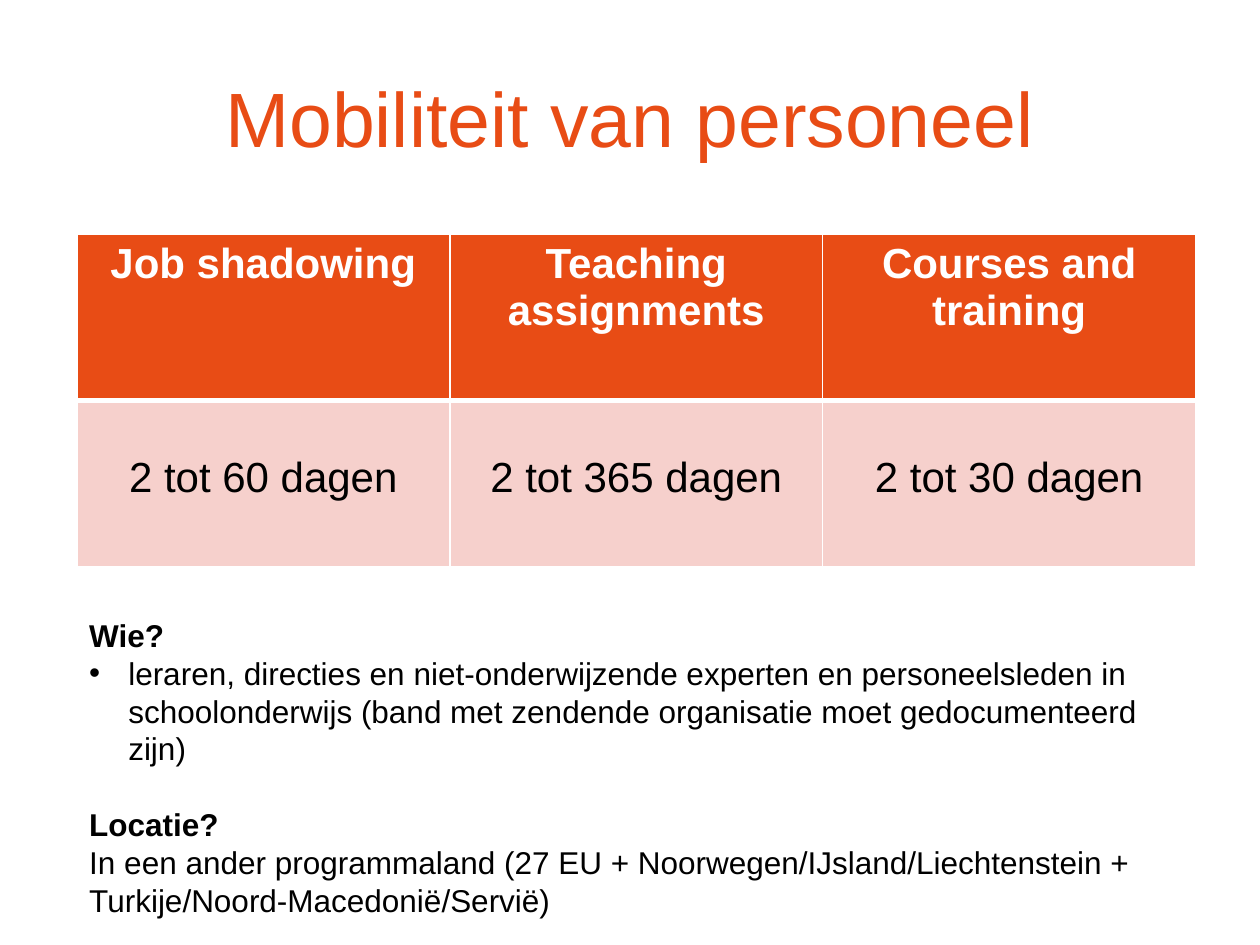
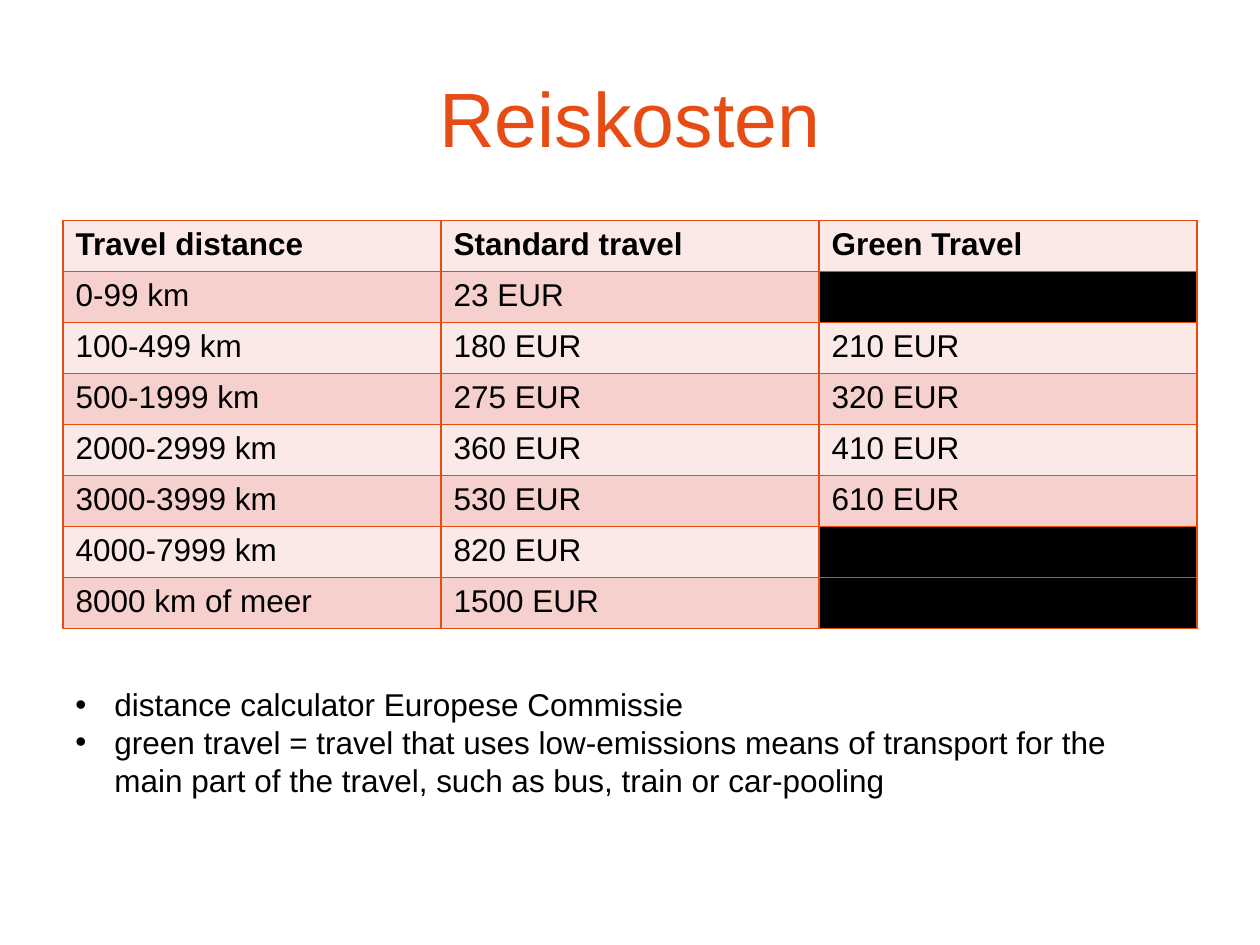
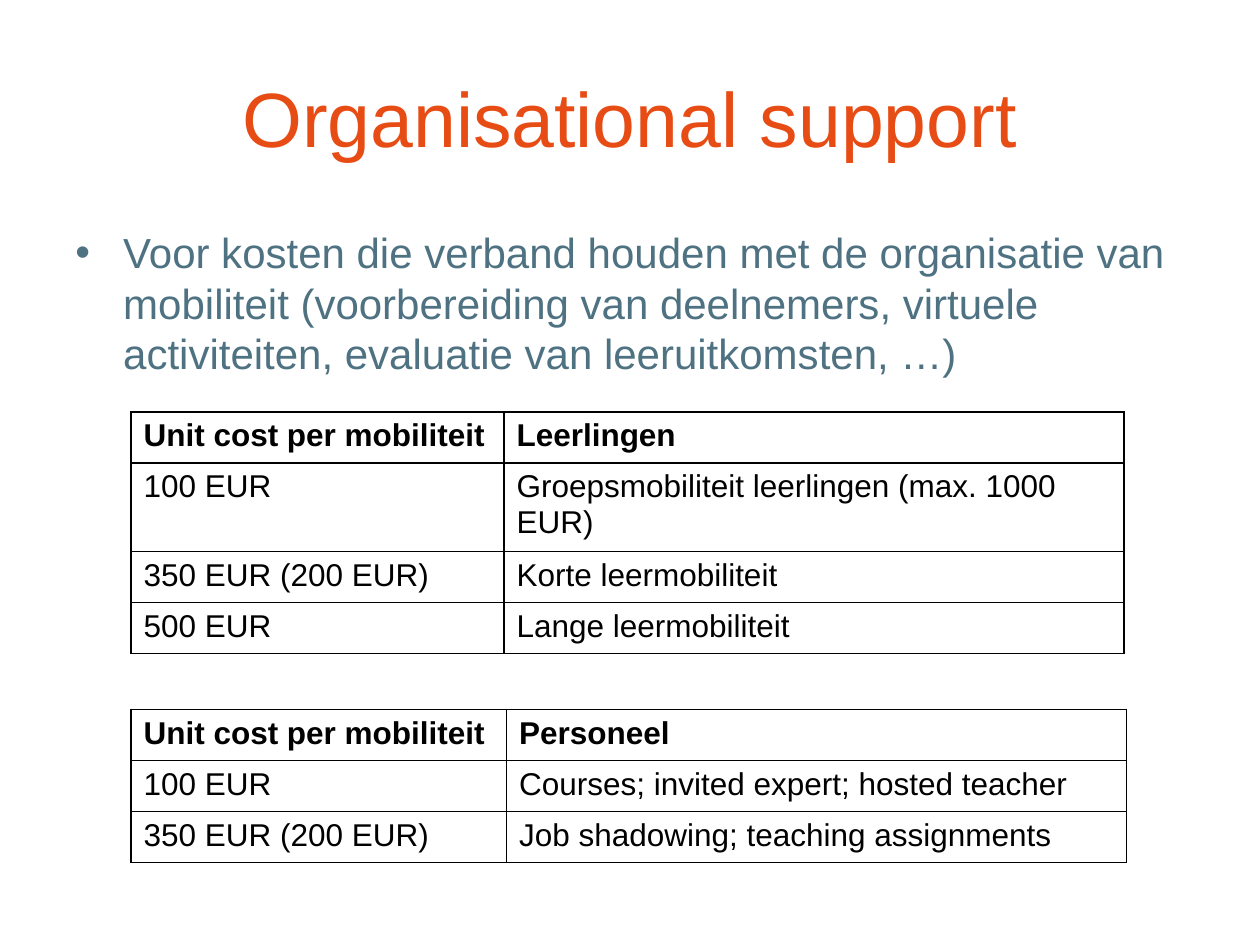
from pptx import Presentation
from pptx.dml.color import RGBColor
from pptx.enum.text import MSO_ANCHOR, PP_ALIGN
from pptx.oxml import parse_xml
from pptx.oxml.ns import nsdecls
from pptx.util import Emu, Inches, Pt

CENTER, LEFT = PP_ALIGN.CENTER, PP_ALIGN.LEFT
MIDDLE, TOP = MSO_ANCHOR.MIDDLE, MSO_ANCHOR.TOP

FONT = "Arial"
COLORS = {
    "orange": "E84C15",
    "pink": "F6D0CC",
    "pale": "FBE9E8",
    "slate": "4E7282",
    "black": "000000",
    "white": "FFFFFF",
}

# Grid of 20 columns by 15 rows; boxes are (column, row, columns, rows)
SLIDE_WIDTH, SLIDE_HEIGHT = Inches(10), Inches(7.5)
COLUMN, ROW = SLIDE_WIDTH / 20, SLIDE_HEIGHT / 15
TITLE_BOX = (1, 0.6, 18, 2.5)
LINE_ROWS = 0.81  # height of a table row with one line of text


def place(box):
    left, top, width, height = box
    return [Emu(round(length)) for length in
            (left * COLUMN, top * ROW, width * COLUMN, height * ROW)]


def write(paragraph, text, size, color="black", bold=False, align=LEFT):
    run = paragraph.add_run()
    run.text = text
    paragraph.alignment = align
    font_format = {"name": FONT, "size": Pt(size), "bold": bold}
    for attribute, value in font_format.items():
        setattr(run.font, attribute, value)
    run.font.color.rgb = RGBColor.from_string(COLORS[color])


def add_bullet(paragraph, indent):
    properties = paragraph._p.get_or_add_pPr()
    properties.set("marL", str(Inches(indent)))
    properties.set("indent", str(-Inches(indent)))
    properties.append(parse_xml(f'<a:buFont {nsdecls("a")} typeface="{FONT}"/>'))
    properties.append(parse_xml(f'<a:buChar {nsdecls("a")} char="•"/>'))


def add_text(slide, box, items, size, anchor=TOP, **style):
    """Each item is a text and its options: bold, bullet indent, space before."""
    frame = slide.shapes.add_textbox(*place(box)).text_frame
    frame.word_wrap = True
    frame.vertical_anchor = anchor
    for index, (text, options) in enumerate(items):
        paragraph = frame.add_paragraph() if index else frame.paragraphs[0]
        if "space" in options:
            paragraph.space_before = Pt(options["space"])
        if "bullet" in options:
            add_bullet(paragraph, options["bullet"])
        write(paragraph, text, size, bold=options.get("bold", False), **style)


def set_borders(cell, color, widths):
    """Draw the left, right, top and bottom border, with widths in points."""
    properties = cell._tc.get_or_add_tcPr()
    for side, width in zip("LRTB", widths):
        properties.append(parse_xml(
            f'<a:ln{side} {nsdecls("a")} w="{Pt(width)}"><a:solidFill>'
            f'<a:srgbClr val="{COLORS[color]}"/></a:solidFill></a:ln{side}>'))


def add_grid(slide, box, rows, column_shares, row_shares, style_cell):
    """Add a table; style_cell borders and fills a cell, and gives its text style."""
    left, top, width, height = place(box)
    table = slide.shapes.add_table(
        len(rows), len(column_shares), left, top, width, height).table
    table.first_row = table.horz_banding = False
    for column, share in zip(table.columns, column_shares):
        column.width = Emu(round(width * share / sum(column_shares)))
    for row, share in zip(table.rows, row_shares):
        row.height = Emu(round(height * share / sum(row_shares)))
    for row_index, texts in enumerate(rows):
        for column_index, text in enumerate(texts):
            cell = table.cell(row_index, column_index)
            fill, text_style = style_cell(cell, row_index, text)
            if fill:
                cell.fill.solid()
                cell.fill.fore_color.rgb = RGBColor.from_string(COLORS[fill])
            else:
                cell.fill.background()
            if text:
                write(cell.text_frame.paragraphs[0], text, **text_style)


# Table styles
def style_duration(cell, row_index, text):
    header = row_index == 0
    set_borders(cell, "white", (1, 1, 1, 3) if header else (1, 1, 3, 1))
    if not header:
        cell.margin_top = Inches(0.43)
    return ("orange" if header else "pink",
            {"size": 24, "color": "white" if header else "black",
             "bold": header, "align": CENTER})


def style_rate(cell, row_index, text):
    set_borders(cell, "orange", [1] * 4)
    band = "pink" if row_index % 2 else "pale"
    return band if text else "black", {"size": 18, "bold": row_index == 0}


def style_unit_cost(cell, row_index, text):
    set_borders(cell, "black", [1] * 4)
    return None, {"size": 18, "bold": row_index == 0}


# Slides
def add_titled_slide(presentation, title):
    slide = presentation.slides.add_slide(presentation.slide_layouts[6])
    add_text(slide, TITLE_BOX, [(title, {})], 44, anchor=MIDDLE,
             color="orange", align=CENTER)
    return slide


def add_staff_slide(presentation):
    slide = add_titled_slide(presentation, "Mobiliteit van personeel")
    durations = [
        ("Job shadowing", "Teaching assignments", "Courses and training"),
        ("2 tot 60 dagen", "2 tot 365 dagen", "2 tot 30 dagen"),
    ]
    add_grid(slide, (1.22, 3.72, 17.76, 5.28), durations, [1] * 3, [1] * 2,
             style_duration)
    add_text(slide, (1.22, 9.68, 17.5, 5.04), [
        ("Wie?", {"bold": True}),
        ("leraren, directies en niet-onderwijzende experten en personeelsleden "
         "in schoolonderwijs (band met zendende organisatie moet "
         "gedocumenteerd zijn)", {"bullet": 0.31}),
        ("Locatie?", {"bold": True, "space": 21.6}),
        ("In een ander programmaland (27 EU + Noorwegen/IJsland/Liechtenstein + "
         "Turkije/Noord-Macedonië/Servië)", {}),
    ], 18)


def add_travel_slide(presentation):
    slide = add_titled_slide(presentation, "Reiskosten")
    rates = [
        ("Travel distance", "Standard travel", "Green Travel"),
        ("0-99 km", "23 EUR", ""),
        ("100-499 km", "180 EUR", "210 EUR"),
        ("500-1999 km", "275 EUR", "320 EUR"),
        ("2000-2999 km", "360 EUR", "410 EUR"),
        ("3000-3999 km", "530 EUR", "610 EUR"),
        ("4000-7999 km", "820 EUR", ""),
        ("8000 km of meer", "1500 EUR", ""),
    ]
    add_grid(slide, (1, 3.5, 18, LINE_ROWS * len(rates)), rates, [1] * 3,
             [1] * len(rates), style_rate)
    add_text(slide, (1, 10.78, 16.98, 2.02), [
        ("distance calculator Europese Commissie", {"bullet": 0.31}),
        ("green travel = travel that uses low-emissions means of transport for "
         "the main part of the travel, such as bus, train or car-pooling",
         {"bullet": 0.31}),
    ], 18)


def add_support_slide(presentation):
    slide = add_titled_slide(presentation, "Organisational support")
    add_text(slide, (1, 3.5, 18, 9.9), [
        ("Voor kosten die verband houden met de organisatie van mobiliteit "
         "(voorbereiding van deelnemers, virtuele activiteiten, evaluatie van "
         "leeruitkomsten, …)", {"bullet": 0.38}),
    ], 24, color="slate")
    unit_header = "Unit cost per mobiliteit"
    pupil_costs = [
        (unit_header, "Leerlingen"),
        ("100 EUR", "Groepsmobiliteit leerlingen (max. 1000 EUR)"),
        ("350 EUR (200 EUR)", "Korte leermobiliteit"),
        ("500 EUR", "Lange leermobiliteit"),
    ]
    staff_costs = [
        (unit_header, "Personeel"),
        ("100 EUR", "Courses; invited expert; hosted teacher"),
        ("350 EUR (200 EUR)", "Job shadowing; teaching assignments"),
    ]
    tables = [
        (6.54, pupil_costs, (5.92, 9.84), (LINE_ROWS, 1.32, LINE_ROWS, LINE_ROWS)),
        (11.26, staff_costs, (5.96, 9.84), [LINE_ROWS] * 3),
    ]
    for top, costs, widths, heights in tables:
        add_grid(slide, (2.08, top, sum(widths), sum(heights)), costs, widths,
                 heights, style_unit_cost)


def main():
    presentation = Presentation()
    presentation.slide_width, presentation.slide_height = SLIDE_WIDTH, SLIDE_HEIGHT
    for add_slide in (add_staff_slide, add_travel_slide, add_support_slide):
        add_slide(presentation)
    presentation.save("out.pptx")


if __name__ == "__main__":
    main()
